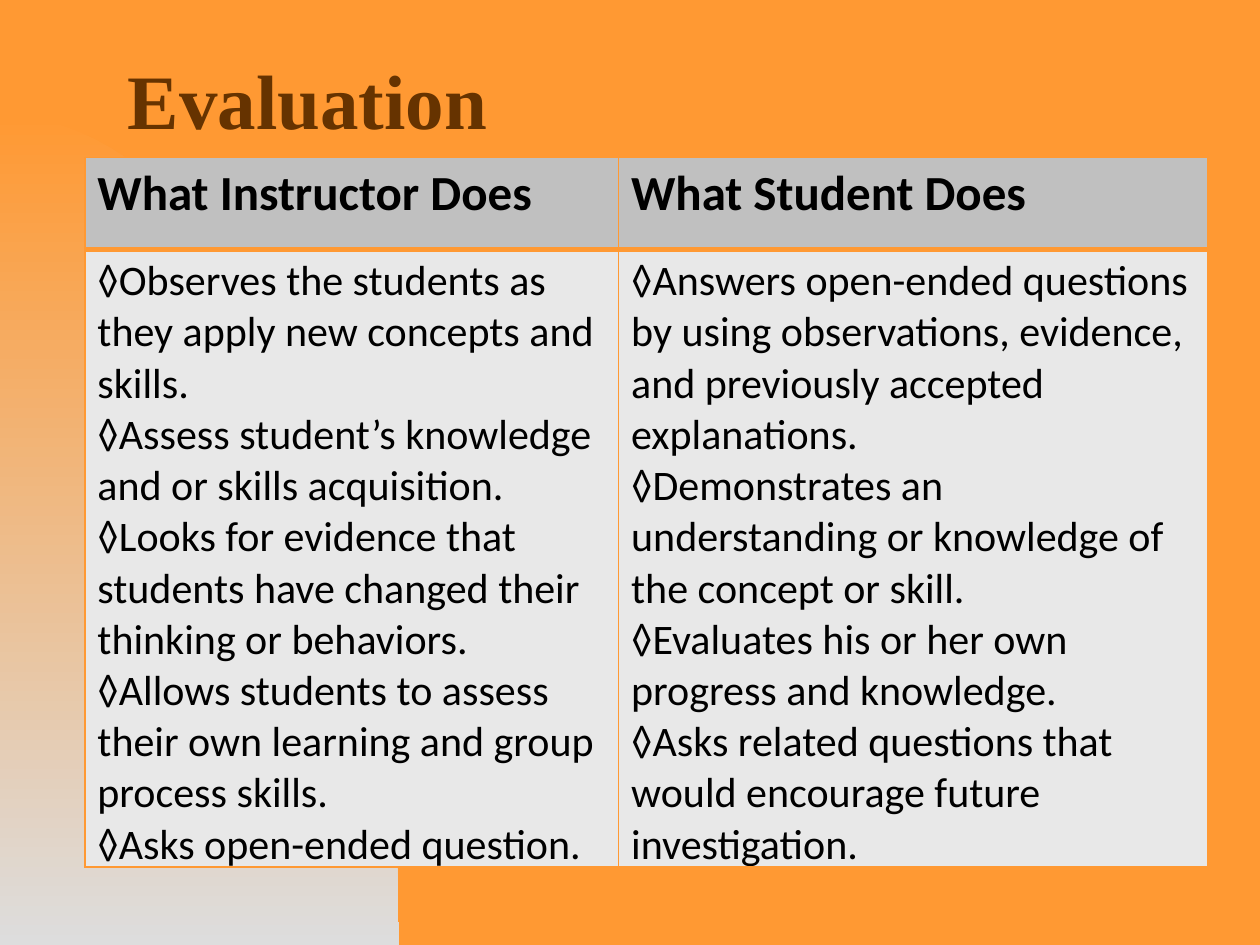
import pptx
import pptx.dml.color
import pptx.enum.text
import pptx.oxml
import pptx.util
import lxml.etree

Pt = pptx.util.Pt

TITLE = "Evaluation"
COLUMNS = [
    ("What Instructor Does", 305, [
        "Observes the students as they apply new concepts and skills.",
        "Assess student’s knowledge and or skills acquisition.",
        "Looks for evidence that students have changed their thinking or behaviors.",
        "Allows students to assess their own learning and group process skills.",
        "Asks open-ended question.",
    ]),
    ("What Student Does", 336.5, [
        "Answers open-ended questions by using observations, evidence, "
        "and previously accepted explanations.",
        "Demonstrates an understanding or knowledge of the concept or skill.",
        "Evaluates his or her own progress and knowledge.",
        "Asks related questions that would encourage future investigation.",
    ]),
]
MARK = "◊"
ROW_HEIGHTS = (52.5, 353)
PAGE_SIZE = (720, 540)
THEME = {
    "orange": "FF9933", "pale": "DDDDDD", "brown": "663300", "black": "000000",
    "header": "C0C0C0", "body": "E8E8E8",
    "title_font": "Times New Roman", "table_font": "Calibri",
    "title_size": 44, "header_size": 28, "body_size": 24,
}


def color(name):
    return pptx.dml.color.RGBColor.from_string(THEME[name])


def style(para, font, size, ink, bold):
    para.font.name = THEME[font]
    para.font.size = Pt(THEME[size])
    para.font.color.rgb = color(ink)
    para.font.bold = bold


def add_curve(page, top=66, right=228, bottom=540, steps=40):
    controls = [(0, top), (126, top), (right, 279), (right, bottom)]
    points = []
    for step in range(steps + 1):
        t = step / steps
        weights = ((1 - t) ** 3, 3 * t * (1 - t) ** 2, 3 * t * t * (1 - t), t ** 3)
        points.append(tuple(
            Pt(sum(w * control[axis] for w, control in zip(weights, controls)))
            for axis in (0, 1)))
    builder = page.shapes.build_freeform(*points[0])
    builder.add_line_segments(points[1:] + [(0, Pt(bottom))], close=True)
    curve = builder.convert_to_shape()
    curve.shadow.inherit = False
    curve.line.fill.background()
    curve.fill.gradient()
    curve.fill.gradient_angle = 270
    for stop, name in zip(curve.fill.gradient_stops, ("orange", "pale")):
        stop.color.rgb = color(name)


def add_title(page):
    box = page.shapes.add_textbox(Pt(66), Pt(36), Pt(624), Pt(54))
    box.text_frame.word_wrap = True
    box.text_frame.vertical_anchor = pptx.enum.text.MSO_ANCHOR.MIDDLE
    para = box.text_frame.paragraphs[0]
    para.text = TITLE
    para.line_spacing = 0.7
    style(para, "title_font", "title_size", "brown", True)


def set_borders(cell, widths):
    properties = cell._tc.get_or_add_tcPr()
    for index, (side, width) in enumerate(zip(("lnL", "lnR", "lnT", "lnB"), widths)):
        line = pptx.oxml.parse_xml(
            '<a:%s xmlns:a="http://schemas.openxmlformats.org/drawingml/2006/main" w="%d">'
            '<a:solidFill><a:srgbClr val="%s"/></a:solidFill></a:%s>'
            % (side, Pt(width), THEME["orange"], side))
        properties.insert(index, line)


def fill_cell(cell, lines, kind, bold, widths):
    cell.fill.solid()
    cell.fill.fore_color.rgb = color(kind)
    cell.text = "\n".join(lines)
    for para in cell.text_frame.paragraphs:
        style(para, "table_font", kind + "_size", "black", bold)
    set_borders(cell, widths)


def add_comparison(page):
    width = sum(column[1] for column in COLUMNS)
    table = page.shapes.add_table(
        2, len(COLUMNS), Pt(48.5), Pt(90), Pt(width), Pt(sum(ROW_HEIGHTS))).table
    table.horz_banding = False
    for row, height in zip(table.rows, ROW_HEIGHTS):
        row.height = Pt(height)
    for index, (heading, column_width, items) in enumerate(COLUMNS):
        table.columns[index].width = Pt(column_width)
        fill_cell(table.cell(0, index), [heading], "header", True, (1, 1, 1, 3))
        fill_cell(table.cell(1, index), [MARK + item for item in items],
                  "body", False, (1, 1, 3, 1))


def main():
    deck = pptx.Presentation()
    deck.slide_width, deck.slide_height = map(Pt, PAGE_SIZE)
    page = deck.slides.add_slide(deck.slide_layouts[6])
    page.background.fill.solid()
    page.background.fill.fore_color.rgb = color("orange")
    add_curve(page)
    add_title(page)
    add_comparison(page)
    deck.save("out.pptx")


if __name__ == "__main__":
    main()
